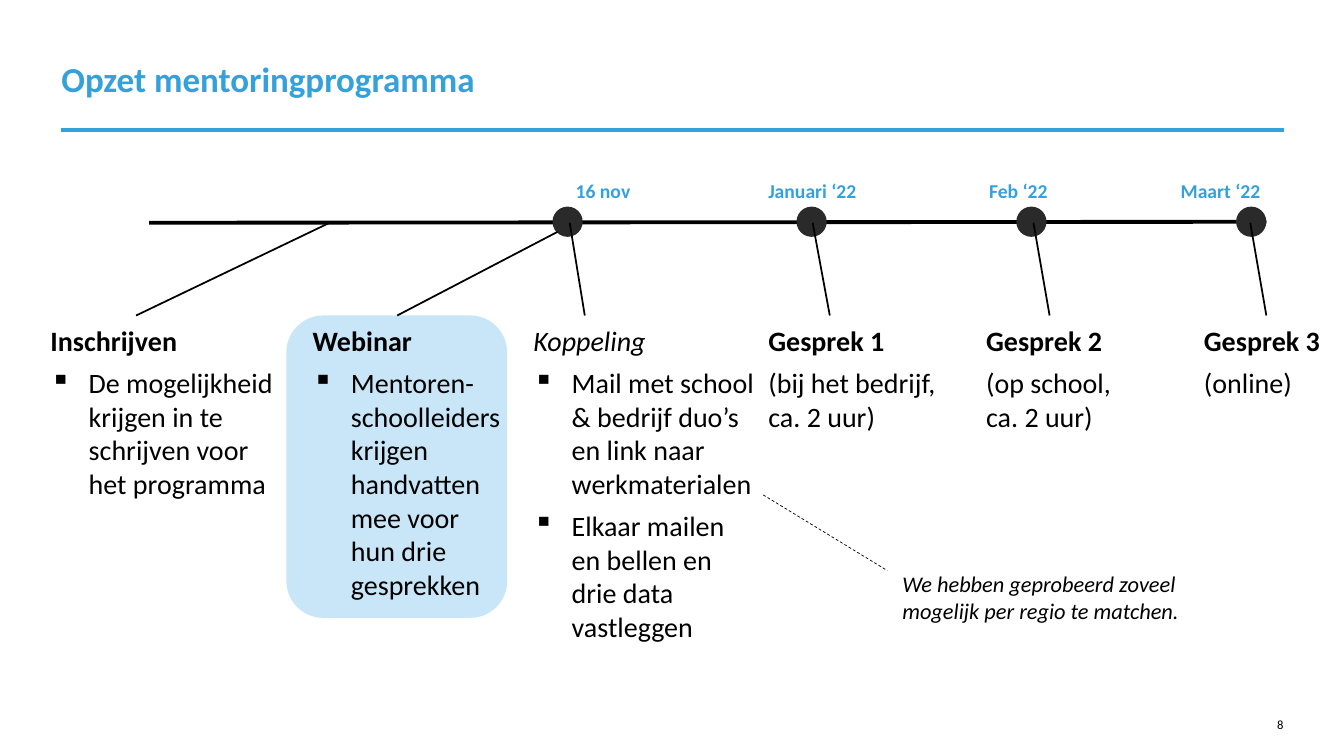
import pptx
import pptx.dml.color
import pptx.enum.dml
import pptx.enum.shapes
import pptx.enum.text
import pptx.oxml.xmlchemy
import pptx.util

Inches = pptx.util.Inches
Pt = pptx.util.Pt
RGBColor = pptx.dml.color.RGBColor
OxmlElement = pptx.oxml.xmlchemy.OxmlElement
MSO_SHAPE = pptx.enum.shapes.MSO_SHAPE
MSO_ANCHOR = pptx.enum.text.MSO_ANCHOR
PP_ALIGN = pptx.enum.text.PP_ALIGN

BLUE = RGBColor(0x34, 0xA1, 0xDB)
PALE_BLUE = RGBColor(0xC8, 0xE6, 0xF7)
BLACK = RGBColor(0, 0, 0)
CHARCOAL = RGBColor(0x2A, 0x2A, 0x2A)
FONT = "Calibri"

# Date, left of its label, left of its dot
MILESTONES = [
    ("16 nov", 5.71, 5.48),
    ("Januari ‘22", 7.62, 7.9),
    ("Feb ‘22", 9.81, 10.08),
    ("Maart ‘22", 11.71, 12.26),
]

# Start and end of the lines from the timeline to the steps
POINTERS = [
    (3.27, 2.21, 1.35),
    (5.53, 2.3, 3.94),
    (5.65, 2.21, 5.8),
    (8.06, 2.21, 8.23),
    (10.25, 2.21, 10.41),
    (12.4, 2.21, 12.56),
]

# Left, width, height, heading, body paragraphs, bulleted, heading in italics
STEPS = [
    (0.5, 2.29, 1.77, "Inschrijven",
     ["De mogelijkheid krijgen in te schrijven voor het programma"], True, False),
    (3.1, 1.89, 2.78, "Webinar",
     ["Mentoren-schoolleiders krijgen handvatten mee voor hun drie gesprekken"],
     True, False),
    (5.29, 2.19, 3.2, "Koppeling",
     ["Mail met school & bedrijf duo’s en link naar werkmaterialen",
      "Elkaar mailen en bellen en drie data vastleggen"], True, True),
    (7.62, 1.89, 1.09, "Gesprek 1", ["(bij het bedrijf, ca. 2 uur)"], False, False),
    (9.78, 1.36, 1.09, "Gesprek 2", ["(op school, ca. 2 uur)"], False, False),
    (11.94, 1.89, 0.76, "Gesprek 3", ["(online)"], False, False),
]


def add_line(s, x1, y1, x2, y2, width, color=BLACK):
    line = s.shapes.add_connector(
        pptx.enum.shapes.MSO_CONNECTOR.STRAIGHT,
        Inches(x1), Inches(y1), Inches(x2), Inches(y2))
    line.line.color.rgb = color
    line.line.width = Pt(width)
    line._element.spPr.append(OxmlElement("a:effectLst"))
    return line


def add_filled(s, kind, x, y, w, h, color):
    sp = s.shapes.add_shape(kind, Inches(x), Inches(y), Inches(w), Inches(h))
    sp.shadow.inherit = False
    sp.fill.solid()
    sp.fill.fore_color.rgb = color
    sp.line.fill.background()


def add_box(s, x, y, w, h, anchor=MSO_ANCHOR.TOP, wrap=True):
    """Add a text box without margins and return its text frame."""
    tf = s.shapes.add_textbox(Inches(x), Inches(y), Inches(w), Inches(h)).text_frame
    tf.margin_left = tf.margin_right = tf.margin_top = tf.margin_bottom = 0
    tf.word_wrap = wrap
    tf.vertical_anchor = anchor
    return tf


def add_run(p, text, size, color=BLACK, bold=False, italic=False):
    r = p.add_run()
    r.text = text
    r.font.name = FONT
    r.font.size = Pt(size)
    r.font.color.rgb = color
    r.font.bold = bold
    r.font.italic = italic


def space(p):
    p.space_before = p.space_after = Pt(3)


def add_bullet(p):
    pPr = p._p.get_or_add_pPr()
    pPr.set("marL", str(Inches(0.38)))
    pPr.set("indent", str(-Inches(0.38)))
    bullet = OxmlElement("a:buChar")
    bullet.set("char", "▪")
    pPr.append(bullet)


def draw_header(s, x, y, w):
    tf = add_box(s, x, y, w, 0.42, MSO_ANCHOR.BOTTOM)
    add_run(tf.paragraphs[0], "Opzet mentoringprogramma", 25, BLUE, bold=True)
    add_line(s, x, y + 0.72, x + w, y + 0.72, 3, BLUE)


def draw_page_number(s, x, y, w, h):
    p = add_box(s, x, y, w, h, MSO_ANCHOR.BOTTOM).paragraphs[0]
    p.alignment = PP_ALIGN.RIGHT
    add_run(p, "8", 9)


def draw_timeline(s, x, y, w, pointer_end):
    """Draw the time axis with its dots, dates and lines down to the steps."""
    add_line(s, x, y + 0.01, x + w, y, 2.75)
    for date, label_x, dot_x in MILESTONES:
        add_filled(s, MSO_SHAPE.OVAL, dot_x, y - 0.15, 0.3, 0.3, CHARCOAL)
        p = add_box(s, label_x, y - 0.42, 2.03, 0.24).paragraphs[0]
        space(p)
        add_run(p, date, 14, BLUE, bold=True)
    for x1, y1, x2 in POINTERS:
        add_line(s, x1, y1, x2, pointer_end, 1.25)


def draw_step(s, x, y, w, h, heading, body, bulleted, italic):
    tf = add_box(s, x, y, w, h)
    p = tf.paragraphs[0]
    space(p)
    add_run(p, heading, 20, bold=not italic, italic=italic)
    for text in body:
        p = tf.add_paragraph()
        space(p)
        if bulleted:
            add_bullet(p)
        add_run(p, text, 20)


def draw_remark(s, x, y, w, h):
    """Draw the remark on matching and the dashed line that leads to it."""
    line = add_line(s, x - 1.38, y - 0.75, x - 0.15, y, 0.5)
    line.line.dash_style = pptx.enum.dml.MSO_LINE.DASH
    p = add_box(s, x, y, w, h, wrap=False).paragraphs[0]
    space(p)
    add_run(p, "We hebben geprobeerd zoveel", 16, italic=True)
    p.add_line_break()
    add_run(p, "mogelijk per regio te matchen.", 16, italic=True)


def main():
    prs = pptx.Presentation()
    prs.slide_width = Inches(13.33)
    prs.slide_height = Inches(7.5)
    s = prs.slides.add_slide(prs.slide_layouts[6])
    draw_header(s, 0.61, 0.57, 12.12)
    draw_page_number(s, 12.37, 7.11, 0.36, 0.15)
    add_filled(s, MSO_SHAPE.ROUNDED_RECTANGLE, 2.84, 3.13, 2.19, 3, PALE_BLUE)
    draw_timeline(s, 1.48, 2.2, 11.08, 3.13)
    for x, w, h, *content in STEPS:
        draw_step(s, x, 3.21, w, h, *content)
    draw_remark(s, 8.95, 5.66, 2.89, 0.63)
    prs.save("out.pptx")


if __name__ == "__main__":
    main()
